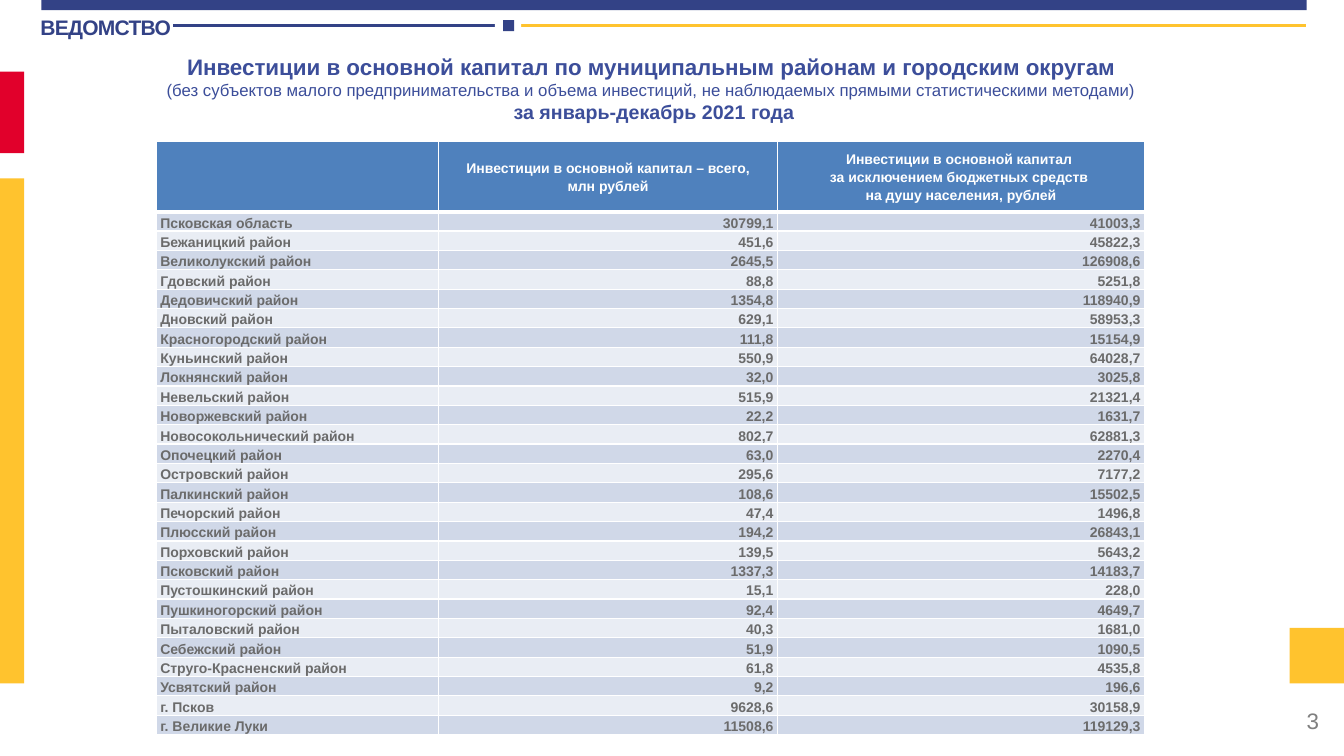
from lxml import etree
from pptx import Presentation, util as u
from pptx.dml.color import RGBColor
from pptx.enum import shapes, text
from pptx.oxml import ns

NAVY = RGBColor(0x33, 0x42, 0x86)
INK = RGBColor(0x3C, 0x4E, 0x9A)
RED = RGBColor(0xE1, 0x00, 0x2B)
GOLD = RGBColor(0xFF, 0xC3, 0x2E)
GRAY = RGBColor(0x80, 0x80, 0x80)
DARK = RGBColor(0x6B, 0x6B, 0x6B)
BLUE = RGBColor(0x4F, 0x81, 0xBD)
BAND = RGBColor(0xD0, 0xD8, 0xE8)
PALE = RGBColor(0xE9, 0xED, 0xF4)
WHITE = RGBColor(0xFF, 0xFF, 0xFF)
LEFT, MID, RIGHT = (text.PP_ALIGN.LEFT, text.PP_ALIGN.CENTER,
                    text.PP_ALIGN.RIGHT)

HEAD = [
    [],
    ["Инвестиции в основной капитал – всего,", "млн рублей"],
    ["Инвестиции в основной капитал \nза исключением бюджетных средств "
     "\nна душу населения, рублей"],
]
DATA = [
    ("Псковская область", "30799,1", "41003,3"),
    ("Бежаницкий район", "451,6", "45822,3"),
    ("Великолукский район", "2645,5", "126908,6"),
    ("Гдовский район", "88,8", "5251,8"),
    ("Дедовичский район", "1354,8", "118940,9"),
    ("Дновский район", "629,1", "58953,3"),
    ("Красногородский район", "111,8", "15154,9"),
    ("Куньинский район", "550,9", "64028,7"),
    ("Локнянский район", "32,0", "3025,8"),
    ("Невельский район", "515,9", "21321,4"),
    ("Новоржевский район", "22,2", "1631,7"),
    ("Новосокольнический район", "802,7", "62881,3"),
    ("Опочецкий район", "63,0", "2270,4"),
    ("Островский район", "295,6", "7177,2"),
    ("Палкинский район", "108,6", "15502,5"),
    ("Печорский район", "47,4", "1496,8"),
    ("Плюсский район", "194,2", "26843,1"),
    ("Порховский район", "139,5", "5643,2"),
    ("Псковский район", "1337,3", "14183,7"),
    ("Пустошкинский район", "15,1", "228,0"),
    ("Пушкиногорский район", "92,4", "4649,7"),
    ("Пыталовский район", "40,3", "1681,0"),
    ("Себежский район", "51,9", "1090,5"),
    ("Струго-Красненский район", "61,8", "4535,8"),
    ("Усвятский район", "9,2", "196,6"),
    ("г. Псков", "9628,6", "30158,9"),
    ("г. Великие Луки", "11508,6", "119129,3"),
]


class Page:
    """Draws styled elements on one slide, on a grid of 133.3 columns by 75 rows."""

    font = "Arial"

    def __init__(self, deck):
        self.slide = deck.slides.add_slide(deck.slide_layouts[6])
        self.col = deck.slide_width / 133.3
        self.row = deck.slide_height / 75

    def at(self, x, y, w, h):
        return (round(x * self.col), round(y * self.row),
                round(w * self.col), round(h * self.row))

    def rect(self, box, fill):
        part = self.slide.shapes.add_shape(
            shapes.MSO_SHAPE.RECTANGLE, *self.at(*box))
        part.shadow.inherit = False
        part.fill.solid()
        part.fill.fore_color.rgb = fill
        part.line.fill.background()

    def line(self, x, end, y, ink):
        rule = self.slide.shapes.add_connector(
            shapes.MSO_CONNECTOR.STRAIGHT,
            *self.at(x, y, end, y))
        rule.line.color.rgb = ink
        rule.line.width = u.Pt(2)
        etree.SubElement(rule._element.spPr, ns.qn("a:effectLst"))

    def run(self, para, words, size, ink, bold):
        for i, part in enumerate(words.split("\n")):
            if i:
                para.add_line_break()
            if part:
                run = para.add_run()
                run.text = part
                face = run.font
                face.name, face.size, face.bold = self.font, u.Pt(size), bold
                face.color.rgb = ink

    def fill(self, frame, paras, ink, align, lead=None):
        for i, runs in enumerate(paras):
            para = frame.add_paragraph() if i else frame.paragraphs[0]
            para.alignment = align
            para.line_spacing = lead
            for words, size, bold in runs:
                self.run(para, words, size, ink, bold)

    def text(self, box, paras, ink, align=LEFT, pad=(0.1, 0.05), mid=False):
        frame = self.slide.shapes.add_textbox(*self.at(*box)).text_frame
        frame.word_wrap = True
        frame.margin_left = frame.margin_right = u.Inches(pad[0])
        frame.margin_top = frame.margin_bottom = u.Inches(pad[1])
        if mid:
            frame.vertical_anchor = text.MSO_ANCHOR.MIDDLE
        self.fill(frame, paras, ink, align)
        return frame

    def edge(self, cell, top, base):
        props = cell._tc.get_or_add_tcPr()
        sides = (("L", 1), ("R", 1), ("T", top), ("B", base))
        for i, (side, wide) in enumerate(sides):
            line = etree.Element(ns.qn("a:ln" + side), w=str(u.Pt(wide)))
            tint = etree.SubElement(line, ns.qn("a:solidFill"))
            etree.SubElement(tint, ns.qn("a:srgbClr"), val=str(WHITE))
            props.insert(i, line)

    def cell(self, cell, lines, back, ink, align, anchor, top, base):
        cell.margin_left = cell.margin_right = u.Inches(0.04)
        cell.margin_top = cell.margin_bottom = 0
        cell.vertical_anchor = anchor
        cell.fill.solid()
        cell.fill.fore_color.rgb = back
        paras = [[(words, 10, True)] for words in lines]
        self.fill(cell.text_frame, paras, ink, align, 1.15)
        self.edge(cell, top, base)

    def table(self, x, y, cols, head, step):
        high = head + step * len(DATA)
        grid = self.slide.shapes.add_table(
            len(DATA) + 1, len(cols), *self.at(x, y, sum(cols), high)).table
        for i, wide in enumerate(cols):
            grid.columns[i].width = round(wide * self.col)
            self.cell(grid.cell(0, i), HEAD[i], BLUE, WHITE, MID,
                      text.MSO_ANCHOR.MIDDLE, 1, 3)
        grid.rows[0].height = round(head * self.row)
        for r, vals in enumerate(DATA, 1):
            grid.rows[r].height = round(step * self.row)
            for c, val in enumerate(vals):
                self.cell(grid.cell(r, c), [val], BAND if r % 2 else PALE,
                          DARK, RIGHT if c else LEFT,
                          text.MSO_ANCHOR.BOTTOM, 3 if r == 1 else 1, 1)


def main():
    deck = Presentation()
    deck.slide_width, deck.slide_height = u.Inches(13.33), u.Inches(7.5)
    page = Page(deck)

    name = page.text((3.9, 1.3, 13.8, 2.7), [[("ВЕДОМСТВО", 15, True)]],
                     NAVY, pad=(0.01, 0.01))
    name.word_wrap = False
    name.paragraphs[0].space_before = u.Pt(1)
    name.paragraphs[0].runs[0].font._element.set("spc", "-50")

    page.rect((4.1, 0, 125.5, 1), NAVY)
    page.rect((0, 7.1, 2.4, 8.1), RED)
    page.rect((0, 17.7, 2.4, 50.1), GOLD)

    page.text((101.8, 69.5, 30, 4), [[("3", 16, False)]], GRAY, RIGHT,
              mid=True)
    page.text((7.9, 4.8, 113.4, 8.1), [
        [("Инвестиции в основной капитал по муниципальным районам "
          "и городским округам\n", 16, True),
         ("(без субъектов малого предпринимательства и объема инвестиций, "
          "не наблюдаемых прямыми статистическими методами)", 12, False)],
        [(" за январь-декабрь 2021 года", 14, True)],
    ], INK, MID)
    page.table(15.5, 14, (28, 33.6, 36.4), 7, 1.92)

    page.line(17.2, 49.9, 2.5, NAVY)
    page.line(51, 129.5, 2.5, GOLD)
    page.rect((49.1, 2, 2.6, 1.1), WHITE)
    page.rect((49.9, 2, 1.1, 1.1), NAVY)
    page.rect((127.9, 62.3, 5.4, 5.5), GOLD)
    deck.save("out.pptx")


if __name__ == "__main__":
    main()
